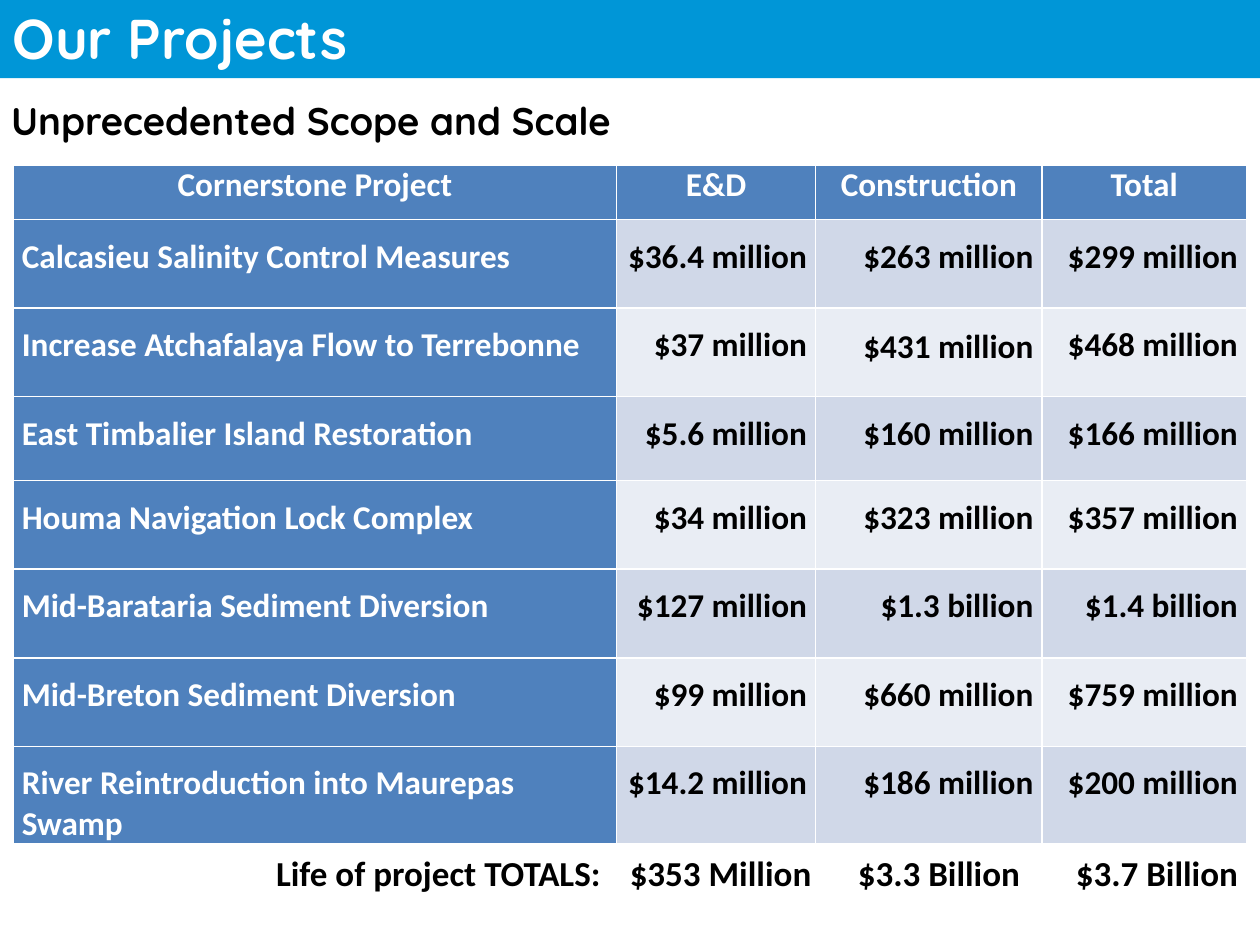
from pptx import Presentation
from pptx.dml.color import RGBColor
from pptx.enum.shapes import MSO_SHAPE
from pptx.enum.text import MSO_ANCHOR, MSO_AUTO_SIZE, PP_ALIGN
from pptx.util import Pt

BLUE = RGBColor(0x00, 0x96, 0xD7)
HEAD = RGBColor(0x4F, 0x81, 0xBD)
BANDS = [RGBColor(0xD0, 0xD8, 0xE8), RGBColor(0xE9, 0xED, 0xF4)]
WHITE = RGBColor(0xFF, 0xFF, 0xFF)
BLACK = RGBColor(0x00, 0x00, 0x00)


def write(frame, text, size, face, color, align=PP_ALIGN.LEFT):
    frame.text = text
    para = frame.paragraphs[0]
    para.alignment = align
    font = para.runs[0].font
    font.size, font.name, font.bold = Pt(size), face, True
    font.color.rgb = color


def add_text(left, top, width, height):
    box = slide.shapes.add_textbox(Pt(left), Pt(top), Pt(width), Pt(height))
    box.text_frame.word_wrap = True
    return box.text_frame


prs = Presentation()
prs.slide_width, prs.slide_height = Pt(720), Pt(540)
slide = prs.slides.add_slide(prs.slide_layouts[5])

# Title on its band
band = slide.shapes.add_shape(MSO_SHAPE.RECTANGLE, Pt(0), Pt(-1.4), Pt(720), Pt(46))
band.shadow.inherit = False
band.fill.solid()
band.fill.fore_color.rgb = BLUE
band.line.fill.background()
title = slide.shapes.title
band._element.getparent().insert(2, band._element)  # behind the title
title.left, title.top, title.width, title.height = Pt(0), Pt(-1.4), Pt(558), Pt(46)
title.text_frame.vertical_anchor = MSO_ANCHOR.TOP
title.text_frame.auto_size = MSO_AUTO_SIZE.NONE
write(title.text_frame, "Our Projects", 32, "Quicksand", WHITE)

head = add_text(-0.7, 50.4, 720, 36)
head.vertical_anchor = MSO_ANCHOR.MIDDLE
write(head, "Unprecedented Scope and Scale", 22, "Quicksand", BLACK)

# Project costs; the default table style draws the white borders
rows = [
    ("Cornerstone Project", "E&D", "Construction", "Total"),
    ("Calcasieu Salinity Control Measures", "$36.4 million", "$263 million", "$299 million"),
    ("Increase Atchafalaya Flow to Terrebonne", "$37 million", "$431 million", "$468 million"),
    ("East Timbalier Island Restoration", "$5.6 million", "$160 million", "$166 million"),
    ("Houma Navigation Lock Complex", "$34 million", "$323 million", "$357 million"),
    ("Mid-Barataria Sediment Diversion", "$127 million", "$1.3 billion", "$1.4 billion"),
    ("Mid-Breton Sediment Diversion", "$99 million", "$660 million", "$759 million"),
    ("River Reintroduction into Maurepas Swamp", "$14.2 million", "$186 million", "$200 million"),
]
widths = [344.8, 113.8, 129.4, 116.8]
heights = [31, 50.6, 50.6, 48, 50.6, 50.6, 50.6, 55.4]
grid = slide.shapes.add_table(len(rows), len(widths), Pt(7.5), Pt(94.5),
                              Pt(sum(widths)), Pt(sum(heights)))
table = grid.table
table.first_col = True
for col, width in zip(table.columns, widths):
    col.width = Pt(width)
for r, (row, height) in enumerate(zip(rows, heights)):
    table.rows[r].height = Pt(height)
    for c, text in enumerate(row):
        cell = table.cell(r, c)
        cell.margin_left = cell.margin_right = Pt(5)
        cell.margin_top, cell.margin_bottom = Pt(9.8 if r else 0), Pt(0)
        label = r == 0 or c == 0
        cell.fill.solid()
        cell.fill.fore_color.rgb = HEAD if label else BANDS[(r - 1) % 2]
        if r == 0:
            align = PP_ALIGN.CENTER
        else:
            align = PP_ALIGN.RIGHT if c else PP_ALIGN.LEFT
        write(cell.text_frame, text, 19, "Calibri", WHITE if label else BLACK, align)
table.cell(2, 2).margin_top = Pt(11)

# Totals under the table
totals = [
    ("Life of project TOTALS:", 122.4, 228, PP_ALIGN.RIGHT),
    ("$353 Million", 352.8, 128, PP_ALIGN.LEFT),
    ("$3.3 Billion", 476.6, 120, PP_ALIGN.CENTER),
    ("$3.7 Billion", 607.7, 110, PP_ALIGN.LEFT),
]
for text, left, width, align in totals:
    frame = add_text(left, 483, width, 31.5)
    frame.auto_size = MSO_AUTO_SIZE.SHAPE_TO_FIT_TEXT
    write(frame, text, 20, "Calibri", BLACK, align)

prs.save("out.pptx")
